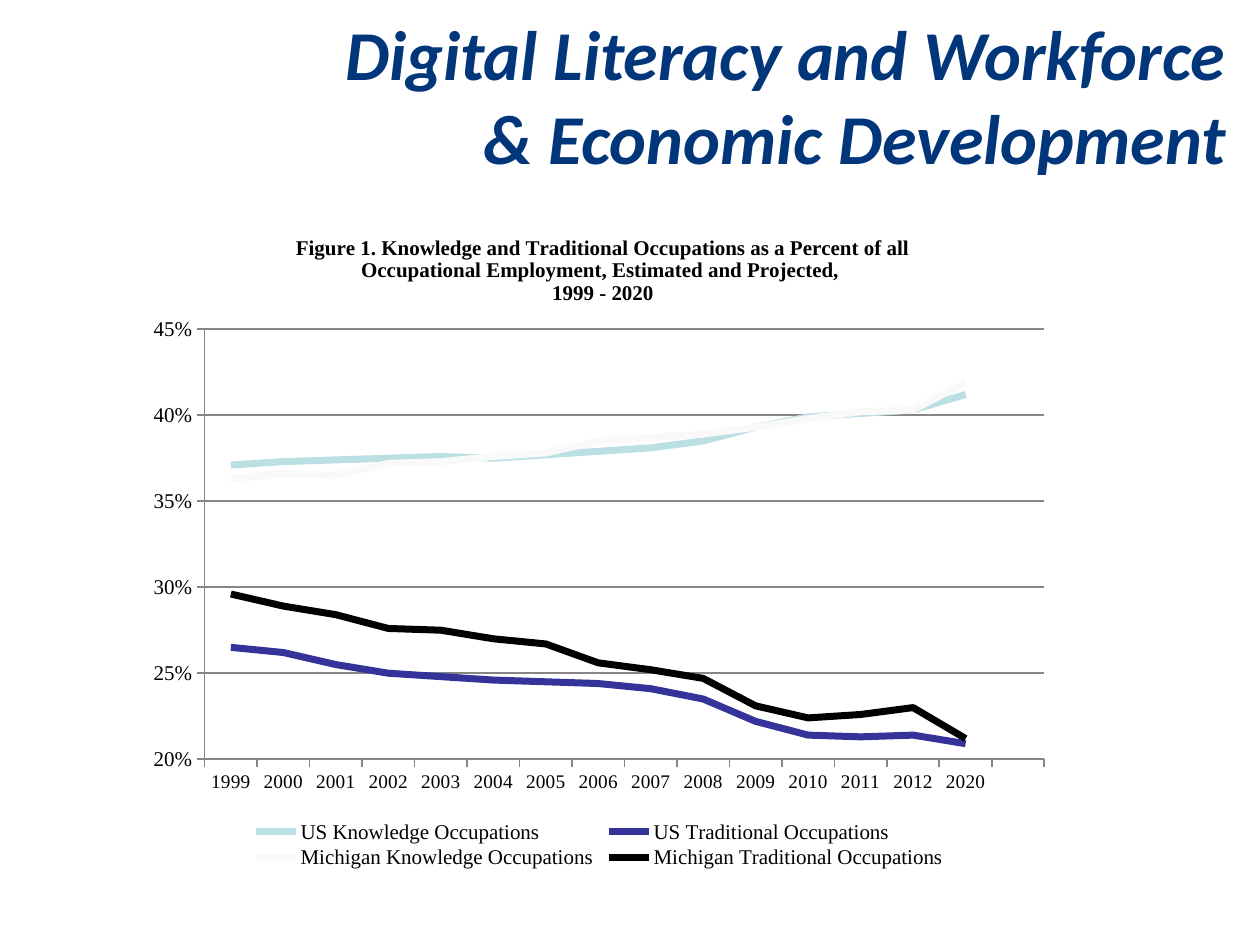
import pptx
import pptx.chart.data
import pptx.dml.color
import pptx.enum.chart
import pptx.enum.text
import pptx.oxml
import pptx.oxml.ns
import pptx.util

PX = 914400 // 126
SLIDE = (1260, 945)
TITLE_BOX = (276, 0, 962, 189)
CHART_BOX = (135, 204, 929, 670)
PLOT_BOX = (205, 329, 840, 430)
LEGEND_BOX = (247, 818, 704, 54)
CAPTION_CORNER = (292, 231)

HEADING = "Digital Literacy and Workforce & Economic Development"
CAPTION = [
    "Figure 1. Knowledge and Traditional Occupations as a Percent of all "
    "Occupational Employment, Estimated and Projected, ",
    "1999 - 2020",
]
YEARS = [str(year) for year in range(1999, 2013)] + ["2020", ""]
SERIES = [
    ("US Knowledge Occupations", "BBE0E3",
     [37.1, 37.3, 37.4, 37.5, 37.6, 37.5, 37.7, 37.9, 38.1, 38.5, 39.3, 39.9, 40.1, 40.3, 41.2]),
    ("US Traditional Occupations", "333399",
     [26.5, 26.2, 25.5, 25.0, 24.8, 24.6, 24.5, 24.4, 24.1, 23.5, 22.2, 21.4, 21.3, 21.4, 20.9]),
    ("Michigan Knowledge Occupations", "F9F9F9",
     [36.3, 36.6, 36.5, 37.2, 37.3, 37.6, 37.8, 38.5, 38.7, 38.9, 39.3, 39.8, 40.2, 40.3, 41.9]),
    ("Michigan Traditional Occupations", "000000",
     [29.6, 28.9, 28.4, 27.6, 27.5, 27.0, 26.7, 25.6, 25.2, 24.7, 23.1, 22.4, 22.6, 23.0, 21.2]),
]


def color(value):
    return pptx.dml.color.RGBColor.from_string(value)


def emu(lengths):
    return [length * PX for length in lengths]


def set_font(font, name, size, value="000000", bold=False, italic=False):
    font.name, font.size = name, pptx.util.Pt(size)
    font.bold, font.italic = bold, italic
    font.color.rgb = color(value)


def set_line(line, value, width):
    line.color.rgb = color(value)
    line.width = pptx.util.Pt(width)


def place(part, box, before, inner=False):
    """Fix a chart part at a slide position, as fractions of the chart."""
    left, top, width, height = CHART_BOX
    fractions = [(box[0] - left) / width, (box[1] - top) / height]
    fractions += [length / whole for length, whole in zip(box[2:], (width, height))]
    tags = '<c:layoutTarget val="inner"/>' if inner else ""
    tags += '<c:xMode val="edge"/><c:yMode val="edge"/>'
    tags += "".join(f'<c:{key} val="{value:.3f}"/>' for key, value in zip("xywh", fractions))
    for old in part.findall(pptx.oxml.ns.qn("c:layout")):
        part.remove(old)
    layout = pptx.oxml.parse_xml(
        f"<c:layout {pptx.oxml.ns.nsdecls('c')}><c:manualLayout>{tags}</c:manualLayout></c:layout>")
    part.insert(before, layout)


def add_heading(slide):
    frame = slide.shapes.add_textbox(*emu(TITLE_BOX)).text_frame
    frame.word_wrap = True
    frame.vertical_anchor = pptx.enum.text.MSO_ANCHOR.MIDDLE
    para = frame.paragraphs[0]
    para.text = HEADING
    para.alignment = pptx.enum.text.PP_ALIGN.RIGHT
    set_font(para.font, "Calibri", 40, "02367A", bold=True, italic=True)


def add_occupation_chart(slide):
    data = pptx.chart.data.CategoryChartData(number_format="0%")
    data.categories = YEARS
    for name, _, percents in SERIES:
        data.add_series(name, [round(percent / 100, 3) for percent in percents] + [None])
    chart = slide.shapes.add_chart(
        pptx.enum.chart.XL_CHART_TYPE.LINE, *emu(CHART_BOX), data).chart
    set_font(chart.font, "Calibri", 9)

    plot = chart.plots[0]
    plot.vary_by_categories = False
    for series, (_, value, _) in zip(plot.series, SERIES):
        series.smooth = False
        set_line(series.format.line, value, 4)

    for axis, size in ((chart.category_axis, 11), (chart.value_axis, 12)):
        set_font(axis.tick_labels.font, "Times New Roman", size)
        set_line(axis.format.line, "868686", 1)
        axis.major_tick_mark = pptx.enum.chart.XL_TICK_MARK.OUTSIDE
        axis.minor_tick_mark = pptx.enum.chart.XL_TICK_MARK.NONE
    axis = chart.value_axis
    axis.minimum_scale, axis.maximum_scale, axis.major_unit = 0.2, 0.45, 0.05
    axis.tick_labels.number_format = "0%"
    axis.tick_labels.number_format_is_linked = False
    axis.has_major_gridlines = True
    set_line(axis.major_gridlines.format.line, "868686", 1)

    chart.has_title = True
    title = chart.chart_title
    title.include_in_layout = False
    frame = title.text_frame
    frame.text = "\n".join(CAPTION)
    for para in frame.paragraphs:
        para.alignment = pptx.enum.text.PP_ALIGN.CENTER
        set_font(para.font, "Times New Roman", 12, bold=True)

    chart.has_legend = True
    legend = chart.legend
    legend.position = pptx.enum.chart.XL_LEGEND_POSITION.BOTTOM
    legend.include_in_layout = False
    set_font(legend.font, "Times New Roman", 12)

    # Each layout element follows the children the chart schema puts before it.
    plot_area = chart.element.find(".//" + pptx.oxml.ns.qn("c:plotArea"))
    place(plot_area, PLOT_BOX, before=0, inner=True)
    place(legend.element if hasattr(legend, "element") else legend._element, LEGEND_BOX, before=1)
    place(title.element if hasattr(title, "element") else title._element, CAPTION_CORNER, before=1)


def main():
    deck = pptx.Presentation()
    deck.slide_width, deck.slide_height = emu(SLIDE)
    slide = deck.slides.add_slide(deck.slide_layouts[6])
    add_occupation_chart(slide)
    add_heading(slide)
    deck.save("out.pptx")


if __name__ == "__main__":
    main()
